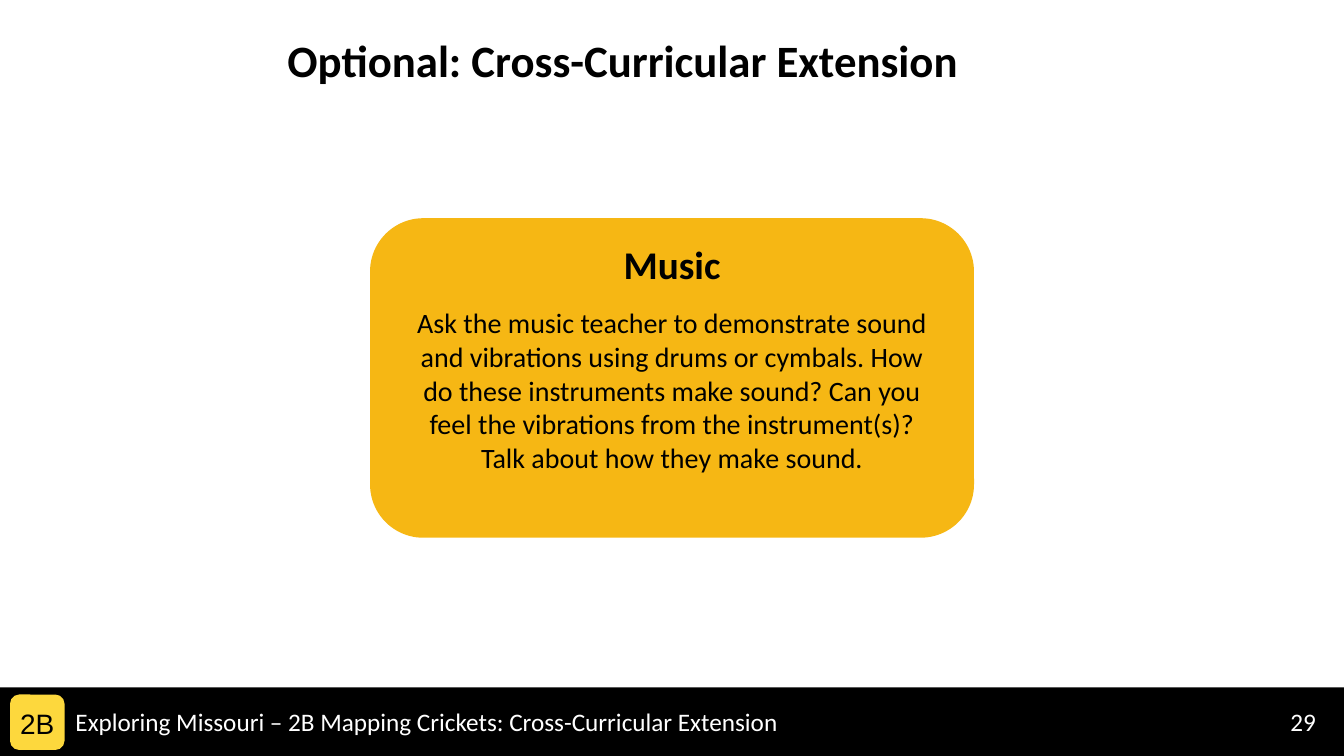
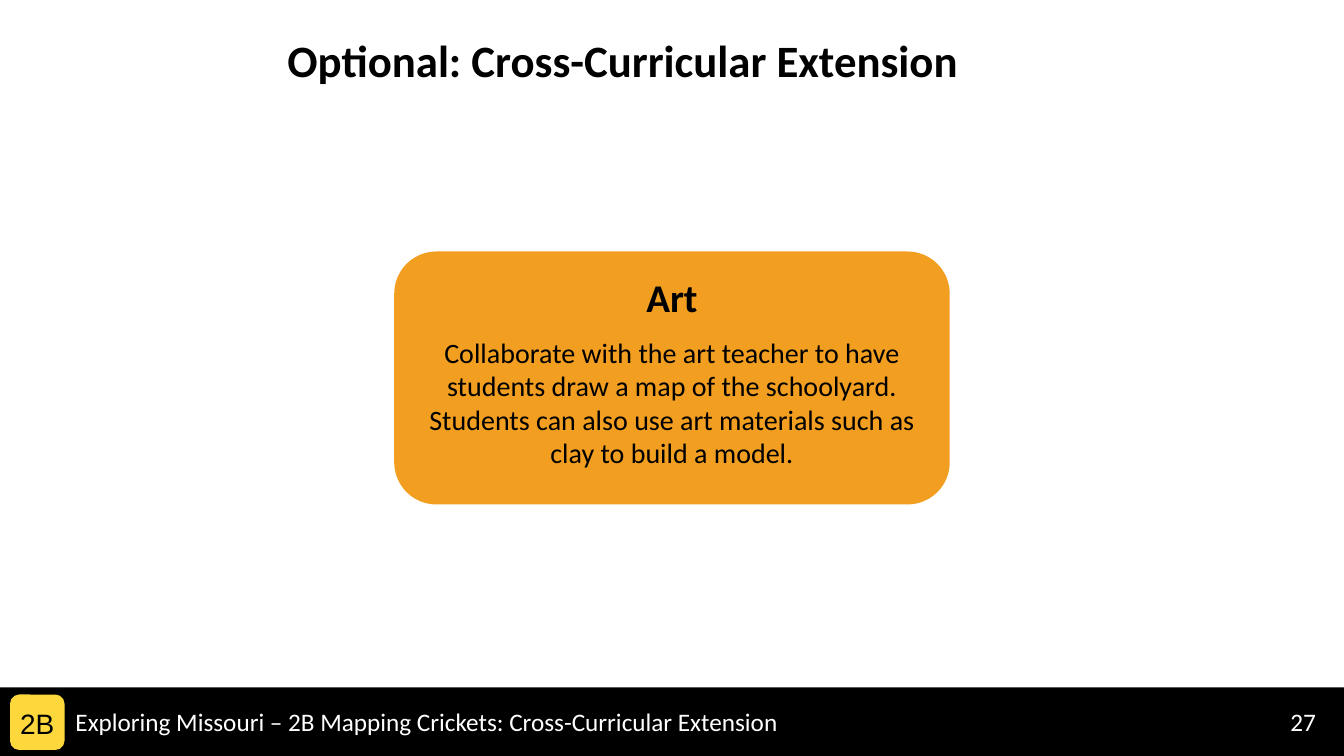
import dataclasses

import pptx
import pptx.dml.color
import pptx.enum.shapes
import pptx.enum.text
import pptx.presentation
import pptx.shapes.autoshape
import pptx.slide
import pptx.text.text
import pptx.util

Inches = pptx.util.Inches
RGBColor = pptx.dml.color.RGBColor
Shape = pptx.enum.shapes.MSO_SHAPE
Align = pptx.enum.text.PP_ALIGN
Anchor = pptx.enum.text.MSO_ANCHOR

BLACK = RGBColor(0x00, 0x00, 0x00)
WHITE = RGBColor(0xFF, 0xFF, 0xFF)
BADGE_YELLOW = RGBColor(0xFD, 0xD8, 0x3D)
MUSIC_GOLD = RGBColor(0xF6, 0xB7, 0x14)
ART_ORANGE = RGBColor(0xF2, 0x9E, 0x20)

PAGE_WIDTH = 13.33
PAGE_HEIGHT = 7.5
BAND_TOP = 6.82
FOOTER_TEXT_TOP = 6.96
HEADING_OFFSET = 0.17
TITLE = "Optional: Cross-Curricular Extension"
FOOTER = "Exploring Missouri – 2B Mapping Crickets: Cross-Curricular Extension"


@dataclasses.dataclass(frozen=True)
class Area:
    left: float
    top: float
    width: float
    height: float

    def lengths(self) -> tuple[pptx.util.Length, ...]:
        return tuple(Inches(value) for value in dataclasses.astuple(self))


@dataclasses.dataclass(frozen=True)
class TextStyle:
    size: int
    color: RGBColor = BLACK
    bold: bool = False
    align: Align = Align.CENTER
    font: str = "Calibri"


@dataclasses.dataclass(frozen=True)
class Extension:
    subject: str
    activity: str
    number: int
    color: RGBColor
    width: float
    height: float
    body_width: float
    body_height: float
    body_offset: float


TITLE_STYLE = TextStyle(32, bold=True)
HEADING_STYLE = TextStyle(28, bold=True)
BODY_STYLE = TextStyle(20)
FOOTER_STYLE = TextStyle(18, WHITE, align=Align.LEFT)
BADGE_STYLE = TextStyle(20, font="Arial")

EXTENSIONS = [
    Extension(
        "Music",
        "Ask the music teacher to demonstrate sound and vibrations using drums "
        "or cymbals. How do these instruments make sound? Can you feel the "
        "vibrations from the instrument(s)? Talk about how they make sound.",
        29, MUSIC_GOLD, 5.99, 3.17, 5.44, 2.12, 0.82,
    ),
    Extension(
        "Art",
        "Collaborate with the art teacher to have students draw a map of the "
        "schoolyard. Students can also use art materials such as clay to build "
        "a model.",
        27, ART_ORANGE, 5.51, 2.51, 5.23, 1.45, 0.78,
    ),
]


def write_text(frame: pptx.text.text.TextFrame, text: str, style: TextStyle) -> None:
    frame.text = text
    frame.word_wrap = True
    para = frame.paragraphs[0]
    para.alignment = style.align
    for span in para.runs:
        span.font.name = style.font
        span.font.size = pptx.util.Pt(style.size)
        span.font.bold = style.bold
        span.font.color.rgb = style.color


def add_text(page: pptx.slide.Slide, area: Area, text: str, style: TextStyle) -> None:
    box = page.shapes.add_textbox(*area.lengths())
    write_text(box.text_frame, text, style)


def add_block(
    page: pptx.slide.Slide, kind: Shape, area: Area, color: RGBColor
) -> pptx.shapes.autoshape.Shape:
    block = page.shapes.add_shape(kind, *area.lengths())
    block.shadow.inherit = False
    block.fill.solid()
    block.fill.fore_color.rgb = color
    block.line.fill.background()
    return block


def add_footer(page: pptx.slide.Slide, number: int) -> None:
    band = Area(0, BAND_TOP, PAGE_WIDTH, PAGE_HEIGHT - BAND_TOP)
    add_block(page, Shape.RECTANGLE, band, BLACK)
    add_text(page, Area(12.7, FOOTER_TEXT_TOP, 0.54, 0.4), str(number), FOOTER_STYLE)
    add_text(page, Area(0.65, FOOTER_TEXT_TOP, 10.82, 0.4), FOOTER, FOOTER_STYLE)

    badge = add_block(
        page, Shape.ROUNDED_RECTANGLE, Area(0.1, 6.89, 0.54, 0.55), BADGE_YELLOW
    )
    frame = badge.text_frame
    frame.margin_left = frame.margin_right = Inches(0)
    frame.margin_top = Inches(0.03)
    frame.margin_bottom = Inches(0)
    frame.vertical_anchor = Anchor.MIDDLE
    write_text(frame, "2B", BADGE_STYLE)


def add_card(page: pptx.slide.Slide, extension: Extension) -> None:
    top = (PAGE_HEIGHT - extension.height) / 2
    left = (PAGE_WIDTH - extension.width) / 2
    body_left = (PAGE_WIDTH - extension.body_width) / 2
    card = Area(left, top, extension.width, extension.height)
    heading = Area(body_left, top + HEADING_OFFSET, extension.body_width, 0.57)
    body = Area(
        body_left, top + extension.body_offset,
        extension.body_width, extension.body_height,
    )
    add_block(page, Shape.ROUNDED_RECTANGLE, card, extension.color)
    add_text(page, body, extension.activity, BODY_STYLE)
    add_text(page, heading, extension.subject, HEADING_STYLE)


def add_page(deck: pptx.presentation.Presentation, extension: Extension) -> None:
    page = deck.slides.add_slide(deck.slide_layouts[6])
    add_footer(page, extension.number)
    add_text(page, Area(2.13, 0.28, 8.1, 0.64), TITLE, TITLE_STYLE)
    add_card(page, extension)


def main() -> None:
    deck = pptx.Presentation()
    deck.slide_width = Inches(PAGE_WIDTH)
    deck.slide_height = Inches(PAGE_HEIGHT)
    for extension in EXTENSIONS:
        add_page(deck, extension)
    deck.save("out.pptx")


if __name__ == "__main__":
    main()
